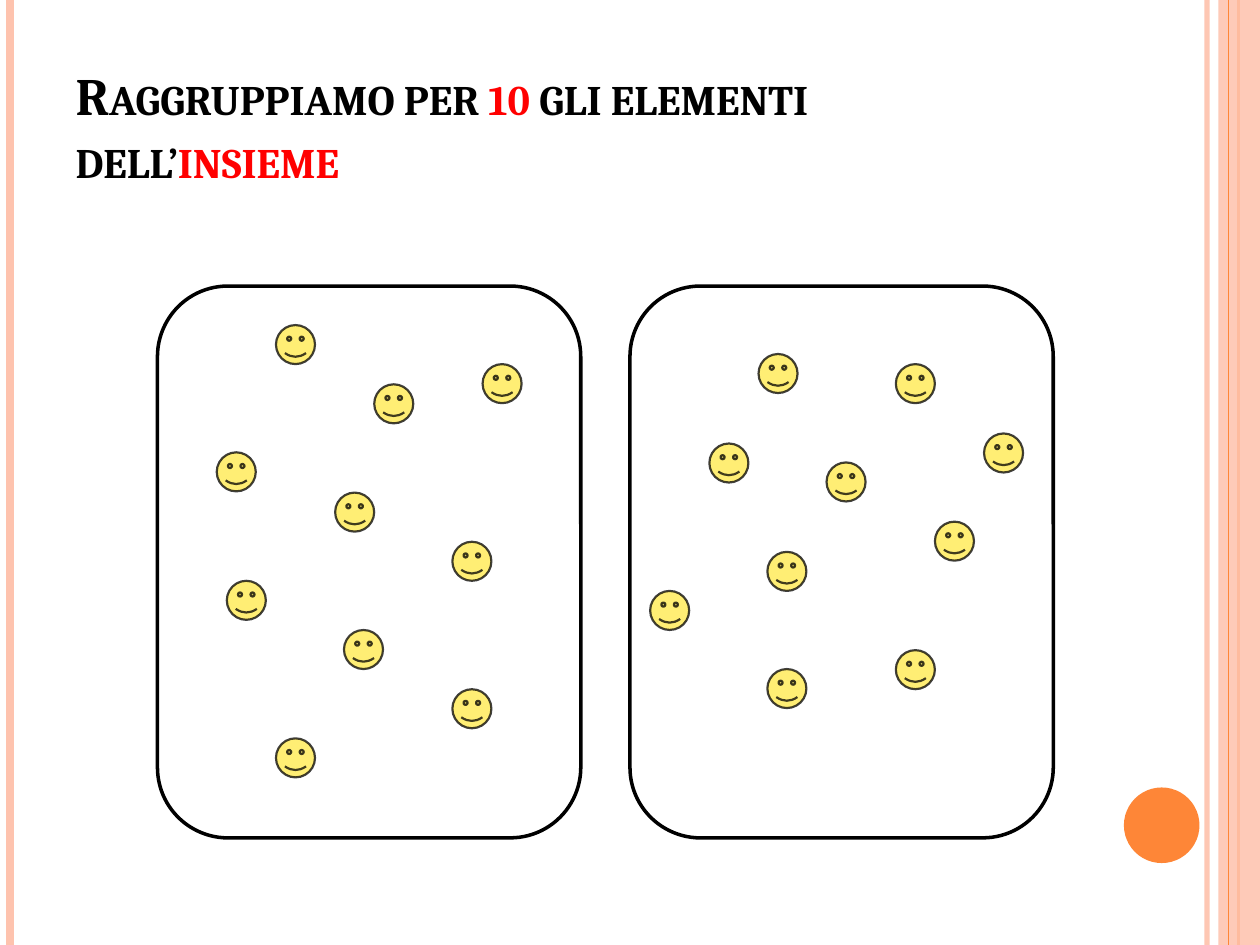
from lxml import etree
from pptx import Presentation
from pptx.dml.color import RGBColor
from pptx.enum.shapes import MSO_CONNECTOR, MSO_SHAPE
from pptx.enum.text import MSO_ANCHOR, MSO_AUTO_SIZE, PP_ALIGN
from pptx.oxml.ns import qn
from pptx.util import Inches, Pt

STRAIGHT = MSO_CONNECTOR.STRAIGHT
RECT, OVAL = MSO_SHAPE.RECTANGLE, MSO_SHAPE.OVAL
SMILEY, ROUNDED = MSO_SHAPE.SMILEY_FACE, MSO_SHAPE.ROUNDED_RECTANGLE

COLORS = {"peach": "FEC3AE", "orange": "FE8637", "yellow": "FFEE74",
          "black": "000000", "red": "FF0000"}


def paint(fill, color, alpha=100):
    """Make a fill solid, with an opacity in percent."""
    fill.solid()
    fill.fore_color.rgb = RGBColor.from_string(COLORS[color])
    if alpha < 100:
        clr = fill._xPr.find(qn("a:solidFill"))[0]
        etree.SubElement(clr, qn("a:alpha"), val=str(alpha * 1000))


def add_shape(shapes, kind, x, y, w, h, fill=None, line=None, line_width=1, line_alpha=100, alpha=100):
    sp = shapes.add_shape(kind, Inches(x), Inches(y), Inches(w), Inches(h))
    sp.shadow.inherit = False
    if fill:
        paint(sp.fill, fill, alpha)
    else:
        sp.fill.background()
    if line:
        paint(sp.line.fill, line, line_alpha)
        sp.line.width = Pt(line_width)
    else:
        sp.line.fill.background()


prs = Presentation()
prs.slide_width, prs.slide_height = Inches(10), Inches(7.5)
s = prs.slides.add_slide(prs.slide_layouts[5])

# Side stripes: x, colour, width, opacity; the band lies under the last one
for x, color, width, alpha in [(9.58, "peach", 3, 93), (0.08, "peach", 4.5, 100),
                               (9.83, "orange", 1.5, 100), (9.75, "orange", 0.75, 100)]:
    if x == 9.75:
        add_shape(s.shapes, RECT, 9.67, 0, 0.33, 7.5, fill="peach", alpha=87)
    stripe = s.shapes.add_connector(STRAIGHT, Inches(x), 0, Inches(x), Inches(7.5))
    paint(stripe.line.fill, color, alpha)
    stripe.line.width = Pt(width)
    etree.SubElement(stripe._element.spPr, qn("a:effectLst"))
add_shape(s.shapes, OVAL, 8.92, 6.25, 0.6, 0.6, fill="orange")

# Title
title = s.shapes.title
title.left, title.top = Inches(0.5), Inches(0.3)
title.width, title.height = Inches(8.17), Inches(1.25)
tf = title.text_frame
tf.word_wrap = True
tf.auto_size = MSO_AUTO_SIZE.NONE
tf.vertical_anchor = MSO_ANCHOR.BOTTOM
p = tf.paragraphs[0]
p.alignment = PP_ALIGN.LEFT
for text, color in [("Raggruppiamo per ", "black"), ("10", "red"),
                    (" gli elementi dell’", "black"), ("insieme", "red")]:
    r = p.add_run()
    r.text = text
    r.font.name = "Cambria"
    r.font.size = Pt(30)
    r.font.bold = True
    r.font.color.rgb = RGBColor.from_string(COLORS[color])
    r.font._element.set("cap", "small")

# Two sets of ten smileys
SETS = [
    [(2.19, 2.58), (2.97, 3.05), (1.72, 3.59), (2.66, 3.91), (3.59, 4.3),
     (1.8, 4.61), (2.73, 5), (2.19, 5.86), (3.59, 5.47), (3.83, 2.89)],
    [(5.16, 4.69), (6.09, 5.31), (7.81, 3.44), (7.11, 5.16), (6.09, 4.38),
     (5.63, 3.52), (7.42, 4.14), (6.56, 3.67), (6.02, 2.81), (7.11, 2.89)],
]
for smileys in SETS:
    group = s.shapes.add_group_shape()
    for x, y in smileys:
        add_shape(group.shapes, SMILEY, x, y, 0.31, 0.31, fill="yellow",
                  line="black", line_width=1.25, line_alpha=74)

# Set outlines
for x in (1.25, 5):
    add_shape(s.shapes, ROUNDED, x, 2.27, 3.36, 4.38, line="black", line_width=2)

prs.save("out.pptx")
